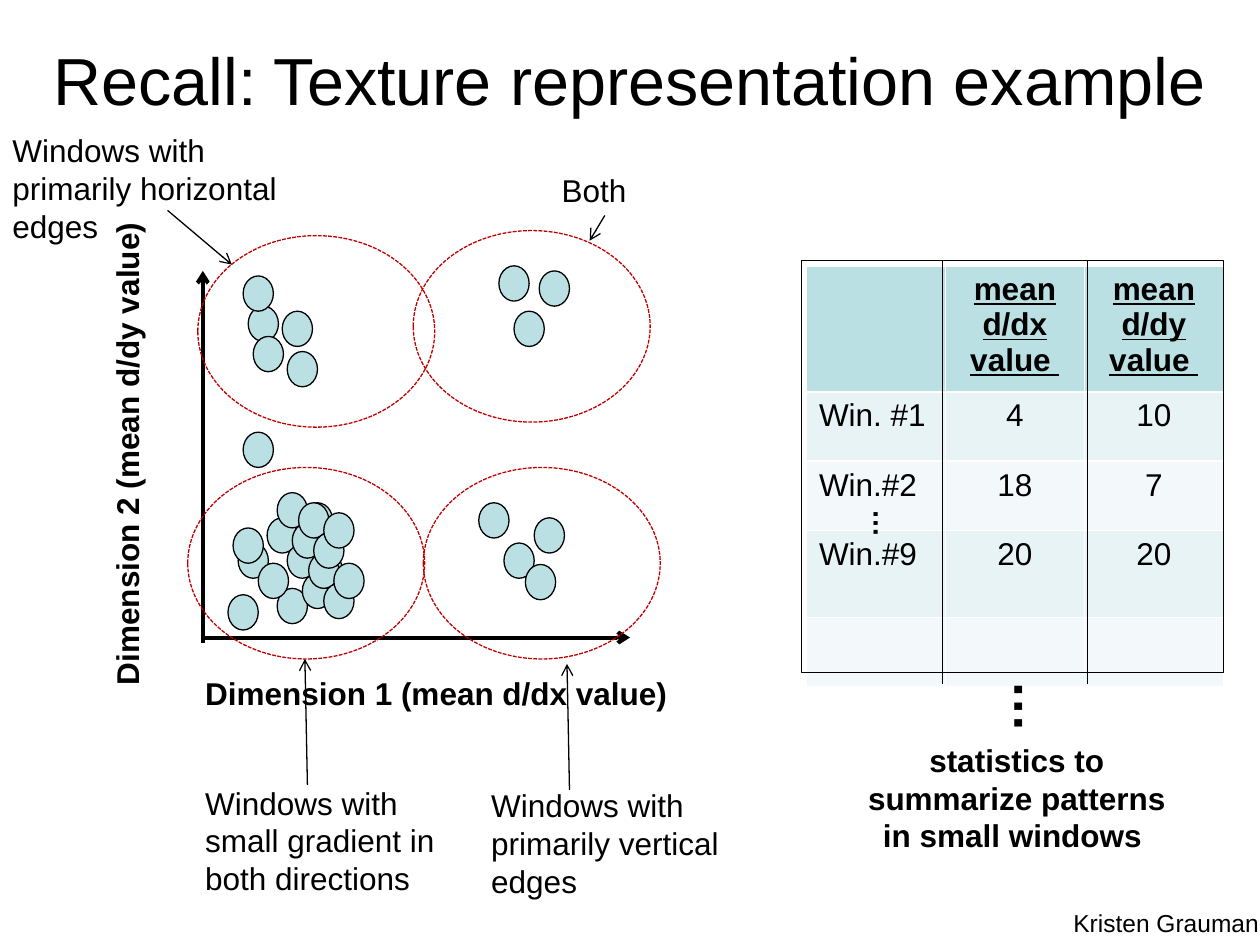
from lxml import etree
from pptx import Presentation
from pptx.dml.color import RGBColor
from pptx.enum.dml import MSO_LINE
from pptx.enum.shapes import MSO_CONNECTOR, MSO_SHAPE
from pptx.enum.text import MSO_ANCHOR, MSO_AUTO_SIZE, PP_ALIGN
from pptx.oxml.ns import qn
from pptx.util import Inches, Pt

STRAIGHT = MSO_CONNECTOR.STRAIGHT
OVAL, RECTANGLE = MSO_SHAPE.OVAL, MSO_SHAPE.RECTANGLE
LEFT, CENTER = PP_ALIGN.LEFT, PP_ALIGN.CENTER
MIDDLE = MSO_ANCHOR.MIDDLE
GROW = MSO_AUTO_SIZE.SHAPE_TO_FIT_TEXT
DASH = MSO_LINE.SQUARE_DOT

BLACK, RED, TEAL = "000000", "C00000", "BBE0E3"
BANDS = ["E7F3F4", "F3F9FA"]


def color(hex_value):
    return RGBColor.from_string(hex_value)


class SlideBuilder:
    font = "Arial"
    body_size = 18
    thin = 0.75

    def __init__(self, slide):
        self.slide = slide
        self.shapes = slide.shapes

    def fill_text(self, frame, text, align=LEFT, **formats):
        paragraph = frame.paragraphs[0]
        paragraph.alignment = align
        run = paragraph.add_run()
        run.text = text
        values = {"name": self.font, "size": Pt(self.body_size), "bold": False}
        for key, value in {**values, **formats}.items():
            setattr(run.font, key, value)
        run.font.color.rgb = color(BLACK)

    def title(self, text, box, size):
        title = self.shapes.title
        title.left, title.top, title.width, title.height = map(Inches, box)
        title.text_frame.vertical_anchor = MIDDLE
        self.fill_text(title.text_frame, text, CENTER, size=Pt(size))

    def text(self, text, box, align=LEFT, rotation=0, **formats):
        label = self.shapes.add_textbox(*map(Inches, box))
        label.rotation = rotation
        label.text_frame.word_wrap = True
        label.text_frame.auto_size = GROW
        self.fill_text(label.text_frame, text, align, **formats)

    def outline(self, kind, box, fill=None, line=BLACK, dash=None):
        shape = self.shapes.add_shape(kind, *map(Inches, box))
        shape.shadow.inherit = False
        if fill:
            shape.fill.solid()
            shape.fill.fore_color.rgb = color(fill)
        else:
            shape.fill.background()
        shape.line.color.rgb = color(line)
        shape.line.width = Pt(self.thin)
        if dash:
            shape.line.dash_style = dash

    def line(self, start, end, width=thin, arrow=False):
        connector = self.shapes.add_connector(STRAIGHT, *map(Inches, start + end))
        connector.line.color.rgb = color(BLACK)
        connector.line.width = Pt(width)
        properties = connector._element.spPr
        etree.SubElement(properties, qn("a:effectLst"))
        if arrow:
            stroke = properties.find(qn("a:ln"))
            etree.SubElement(stroke, qn("a:tailEnd"), type="arrow")

    def table(self, rows, box, row_heights):
        frame = self.shapes.add_table(len(rows), len(rows[0]), *map(Inches, box))
        for r, (values, height) in enumerate(zip(rows, row_heights)):
            frame.table.rows[r].height = Inches(height)
            header = r == 0
            for c, value in enumerate(values):
                cell = frame.table.cell(r, c)
                cell.fill.solid()
                cell.fill.fore_color.rgb = color(TEAL if header else BANDS[(r - 1) % 2])
                if value:
                    self.fill_text(cell.text_frame, value, CENTER if c else LEFT,
                                   bold=header, underline=header)


def main():
    prs = Presentation()
    prs.slide_width, prs.slide_height = Inches(10), Inches(7.5)
    page = SlideBuilder(prs.slides.add_slide(prs.slide_layouts[5]))
    page.title("Recall: Texture representation example", (0, 0, 10, 1.25), 38)

    # Table of window statistics
    page.text("statistics to summarize patterns in small windows ",
              (6.67, 5.83, 2.8, 1.01), CENTER, bold=True)
    statistics = [
        ["", "mean d/dx value ", "mean d/dy value "],
        ["Win. #1", "4", "10"],
        ["Win.#2", "18", "7"],
        ["Win.#9", "20", "20"],
        ["", "", ""],
    ]
    page.table(statistics, (6.4, 2.11, 3.31, 3.34), [1, 0.55, 0.55, 0.69, 0.55])
    page.text("…", (7.31, 5.9, 1.8, 0.61), rotation=90, size=Pt(30), bold=True)
    page.outline(RECTANGLE, (6.36, 2.07, 3.35, 3.27))
    for divider in (7.48, 8.63):
        page.line((divider, 2.07), (divider, 5.43))
    page.text("…", (5.38, 5.4, 3.28, 0.37), rotation=90, size=Pt(16), bold=True)

    # Axes
    page.line((1.61, 5.06), (5, 5.06), 2.25, arrow=True)
    page.line((1.61, 5.1), (1.61, 2.15), 2.25, arrow=True)
    page.text("Dimension 1 (mean d/dx value)", (1.53, 5.3, 4.91, 0.4), bold=True)
    page.text("Dimension 2 (mean d/dy value)", (-1.45, 2.88, 4.91, 0.4),
              rotation=270, bold=True)

    # Windows as points, from back to front
    windows = [
        (1.93, 3.43), (3.8, 3.99), (4.28, 2.15), (3.96, 2.11), (4.08, 2.47),
        (4, 4.31), (1.97, 2.43), (2.28, 2.79), (4.24, 4.11), (1.89, 4.31),
        (2.2, 4.67), (2.28, 4.31), (2.4, 4.55), (1.81, 4.72), (2.05, 4.47),
        (2.12, 4.11), (2.48, 4.39), (1.85, 4.19), (2.24, 2.47), (1.93, 2.19),
        (4.17, 4.48), (2.01, 2.67), (2.45, 4.39), (2.57, 4.63), (2.65, 4.47),
        (2.2, 3.91), (2.32, 4.15), (2.4, 3.99), (2.37, 3.99), (2.49, 4.23),
        (2.57, 4.07),
    ]
    for window in windows:
        page.outline(OVAL, window + (0.24, 0.28), fill=TEAL)

    # Clusters: label, label box, ellipse corner, arrow start and end
    clusters = [
        ("Windows with small gradient in both directions", (1.53, 6.17, 2.08, 1.01),
         (1.49, 3.71), (2.44, 6.23), (2.42, 5.23)),
        ("Windows with primarily vertical edges", (3.8, 6.19, 2.08, 1.01),
         (3.36, 3.71), (4.52, 6.27), (4.5, 5.27)),
        ("Windows with primarily horizontal edges", (0, 0.99, 2.36, 1.01),
         (1.57, 1.87), (1.33, 1.67), (1.84, 2.1)),
        ("Both", (4.36, 1.31, 2.08, 0.4),
         (3.28, 1.83), (4.8, 1.71), (4.68, 1.91)),
    ]
    for label, label_box, corner, start, end in clusters:
        page.text(label, label_box)
        page.outline(OVAL, corner + (1.88, 1.52), line=RED, dash=DASH)
        page.line(start, end, arrow=True)

    # Credit
    page.text("Kristen Grauman", (8.42, 7.16, 2.08, 0.34), size=Pt(14))

    prs.save("out.pptx")


if __name__ == "__main__":
    main()
